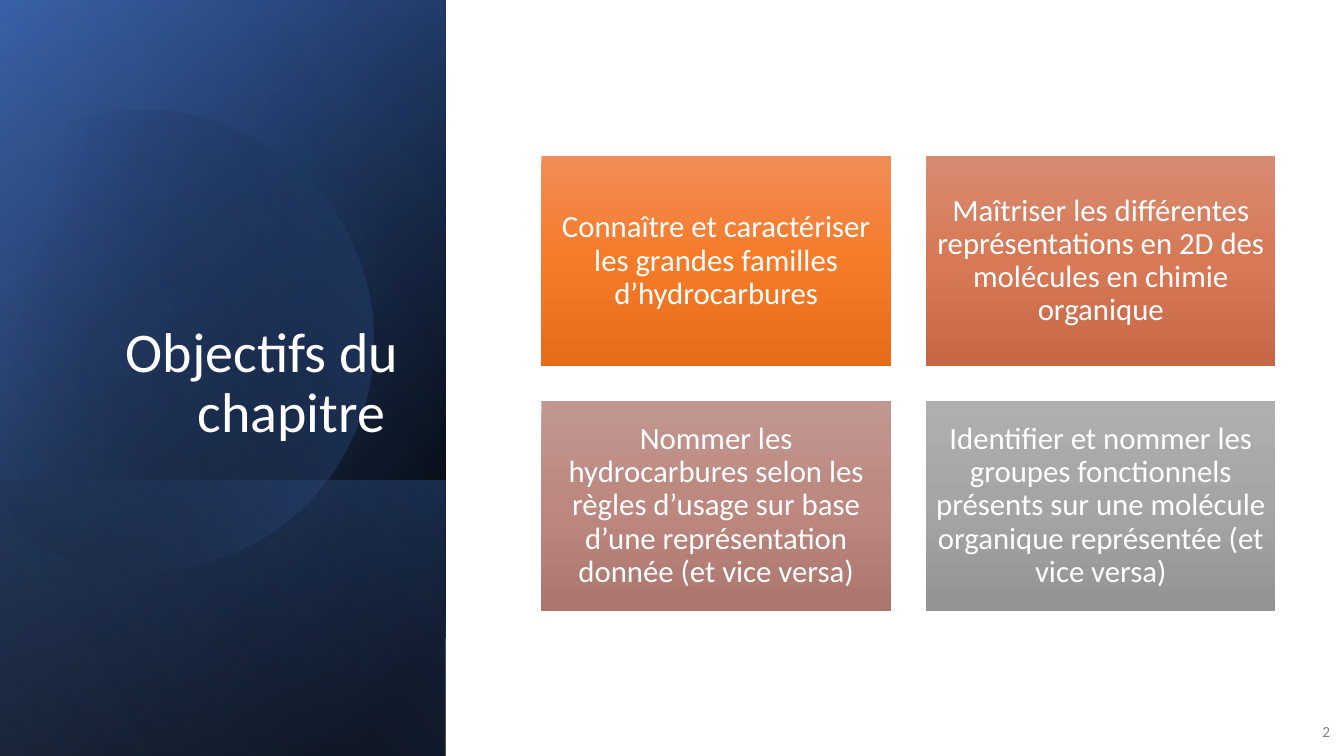
from itertools import pairwise
from math import cos, radians, sin, tan

from lxml.etree import SubElement
from pptx import Presentation
from pptx.dml.color import RGBColor
from pptx.enum.shapes import MSO_SHAPE
from pptx.enum.text import MSO_ANCHOR, PP_ALIGN
from pptx.oxml.ns import qn
from pptx.util import Inches, Pt

WIDTH, HEIGHT = 13.33, 7.5
FONT = "Calibri"
COLORS = {
    "white": "FFFFFF", "gray": "808080", "black": "000000",
    "navy": "2F5597", "blue": "4472C4", "pale": "8FAADC",
}
CARDS = [
    ("Connaître et caractériser les grandes familles d’hydrocarbures",
     ("F18C57", "F67B28", "E56C19")),
    ("Maîtriser les différentes représentations en 2D des molécules en chimie organique",
     ("D78B72", "D77956", "C66846")),
    ("Nommer les hydrocarbures selon les règles d’usage sur base d’une représentation donnée (et vice versa)",
     ("C19791", "BC8880", "AA766E")),
    ("Identifier et nommer les groupes fonctionnels présents sur une molécule organique représentée (et vice versa)",
     ("AFAFAF", "A5A5A5", "939393")),
]


def fill_gradient(sp, stops, angle):
    """Fill with (position %, hex, opacity %) stops, angle clockwise, without line or shadow."""
    sp.shadow.inherit = False
    sp.line.fill.background()
    sp.fill.gradient()
    grad = sp.element.spPr.find(qn("a:gradFill"))
    for child in list(grad):
        grad.remove(child)
    grad.set("rotWithShape", "1")
    stop_list = SubElement(grad, qn("a:gsLst"))
    for pos, color, opacity in stops:
        stop = SubElement(stop_list, qn("a:gs"), pos=str(pos * 1000))
        clr = SubElement(stop, qn("a:srgbClr"), val=color)
        if opacity < 100:
            SubElement(clr, qn("a:alpha"), val=str(opacity * 1000))
    SubElement(grad, qn("a:lin"), ang=str(angle * 60000), scaled="0")


def write(sp, text, size, color, align, anchor, inset=None, spacing=None):
    tf = sp.text_frame
    tf.word_wrap = True
    tf.vertical_anchor = anchor
    if inset is not None:
        tf.margin_left = tf.margin_right = tf.margin_top = tf.margin_bottom = Inches(inset)
    p = tf.paragraphs[0]
    p.alignment = align
    p.line_spacing = spacing
    r = p.add_run()
    r.text = text
    r.font.name = FONT
    r.font.size = Pt(size)
    r.font.color.rgb = RGBColor.from_string(color)


def add_turned_panel(slide, left, top, width, height, stops, angle):
    """Cover the given box with a mirrored rectangle turned by a quarter."""
    sp = slide.shapes.add_shape(
        MSO_SHAPE.RECTANGLE,
        Inches(left + (width - height) / 2), Inches(top + (height - width) / 2),
        Inches(height), Inches(width))
    sp.rotation = 90
    sp.element.spPr.get_or_add_xfrm().set("flipH", "1")
    fill_gradient(sp, stops, angle)


def add_cut_disc(slide, cx, cy, radius):
    """Disc with its left side cut off by a chord; the arcs are Bézier curves."""
    angles = [radians(a) for a in (-118, -90, 0, 90, 150)]
    units = 1000  # path units per inch
    points = [(units * (cx + radius * cos(a)), units * (cy + radius * sin(a))) for a in angles]
    left, top = (min(values) for values in zip(*points))
    builder = slide.shapes.build_freeform(*points[0], scale=Inches(1) / units)
    builder.add_line_segments(points[1:], close=True)
    sp = builder.convert_to_shape()

    lines = list(sp.element.iter(qn("a:lnTo")))
    ends = zip(pairwise(angles), pairwise(points))
    for line, ((a, b), ((x1, y1), (x2, y2))) in zip(lines, ends):
        reach = units * radius * 4 / 3 * tan((b - a) / 4)
        controls = [(x1 - reach * sin(a), y1 + reach * cos(a)),
                    (x2 + reach * sin(b), y2 - reach * cos(b))]
        line.tag = qn("a:cubicBezTo")
        for i, (x, y) in enumerate(controls):
            pt = SubElement(line, qn("a:pt"), x=str(round(x - left)), y=str(round(y - top)))
            line.insert(i, pt)
    sp.rotation = 343.9
    fill_gradient(sp, [(29, COLORS["black"], 0), (100, COLORS["blue"], 43)], 30)


def add_title_panel(slide, left, top, width, height):
    black, blue = COLORS["black"], COLORS["blue"]
    box = (left, top, width, height)
    foot = 0.365 * height
    add_turned_panel(slide, *box, [(8, black, 100), (100, COLORS["navy"], 100)], 50)
    add_turned_panel(slide, *box, [(0, black, 0), (99, blue, 46)], 30)
    add_turned_panel(slide, left, top + height - foot, width, foot,
                     [(2, blue, 29), (100, black, 30)], 130)
    add_cut_disc(slide, left + 0.32 * width, top + 0.445 * height, 0.305 * height)
    add_turned_panel(slide, *box, [(0, black, 0), (99, COLORS["pale"], 11)], 120)
    title = slide.shapes.add_textbox(
        Inches(left + 0.145 * width), Inches(top + 0.245 * height),
        Inches(0.77 * width), Inches(0.35 * height))
    write(title, "Objectifs du chapitre ", 40, COLORS["white"],
          PP_ALIGN.RIGHT, MSO_ANCHOR.BOTTOM, spacing=0.9)


def add_cards(slide, left, top, width, height, gap=0.35, columns=2):
    rows = len(CARDS) // columns
    card_w = (width - gap * (columns - 1)) / columns
    card_h = (height - gap * (rows - 1)) / rows
    for i, (text, shades) in enumerate(CARDS):
        row, col = divmod(i, columns)
        sp = slide.shapes.add_shape(
            MSO_SHAPE.RECTANGLE,
            Inches(left + col * (card_w + gap)), Inches(top + row * (card_h + gap)),
            Inches(card_w), Inches(card_h))
        fill_gradient(sp, [(pos, c, 100) for pos, c in zip((0, 50, 100), shades)], 90)
        write(sp, text, 22, COLORS["white"], PP_ALIGN.CENTER, MSO_ANCHOR.MIDDLE,
              inset=0.09, spacing=0.9)


def add_page_number(slide, left, top, width, height):
    sp = slide.shapes.add_textbox(Inches(left), Inches(top), Inches(width), Inches(height))
    write(sp, "2", 11, COLORS["gray"], PP_ALIGN.RIGHT, MSO_ANCHOR.MIDDLE)


def main():
    prs = Presentation()
    prs.slide_width, prs.slide_height = Inches(WIDTH), Inches(HEIGHT)
    slide = prs.slides.add_slide(prs.slide_layouts[6])
    add_title_panel(slide, 0, 0, 4.42, HEIGHT)
    add_page_number(slide, 12.8, 7.06, 0.49, 0.4)
    add_cards(slide, 5.37, 1.55, 7.28, 4.51)
    prs.save("out.pptx")


if __name__ == "__main__":
    main()
